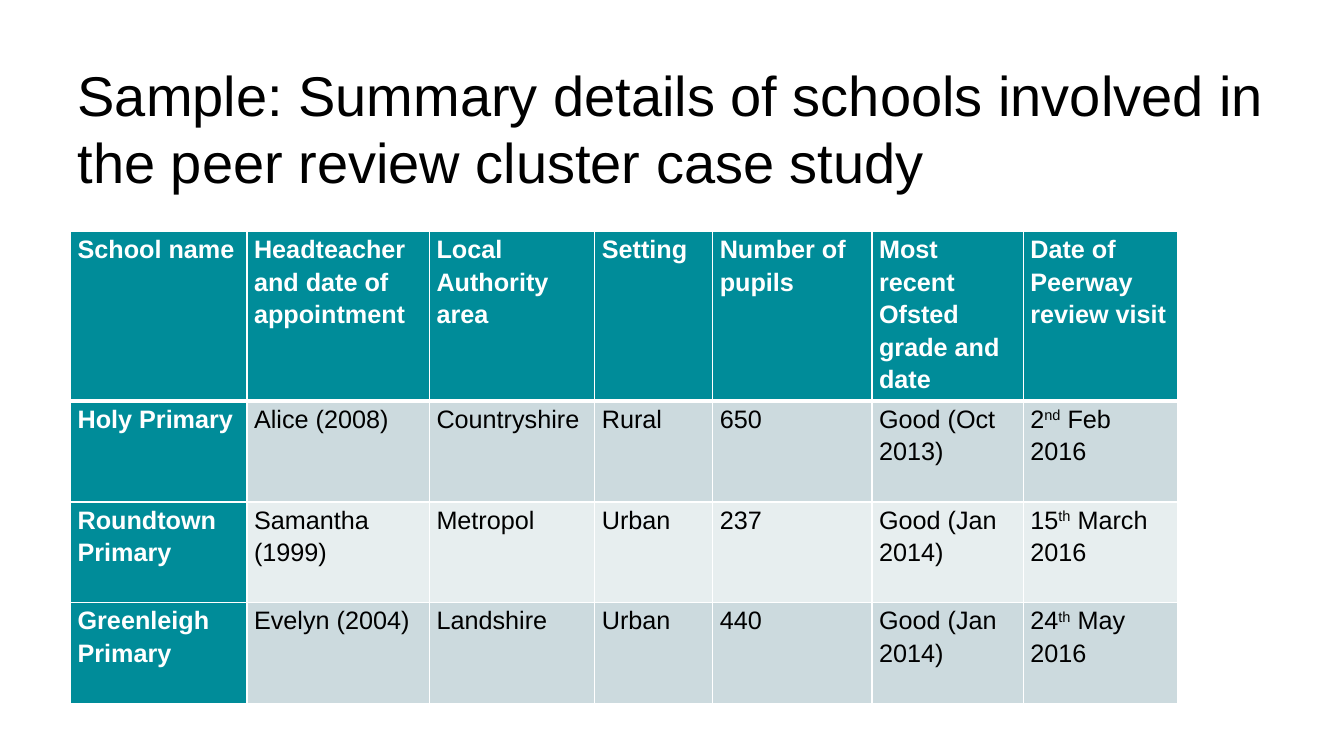
from dataclasses import dataclass

from lxml.etree import SubElement
from pptx import Presentation
from pptx.dml.color import RGBColor
from pptx.enum.text import MSO_ANCHOR, MSO_AUTO_SIZE, PP_ALIGN
from pptx.oxml.ns import qn
from pptx.util import Inches, Pt

TEAL, WHITE, BLACK = "008C99", "FFFFFF", "000000"
BANDS = ("CCDADE", "E7EEEF")
COLUMN_WIDTHS = (1.75, 1.81, 1.64, 1.17, 1.58, 1.5, 1.53)
ROW_HEIGHTS = (1.68, 1, 1, 1)
HEADINGS = (
    "School name",
    "Headteacher and date of appointment",
    "Local Authority area",
    "Setting",
    "Number of pupils",
    "Most recent Ofsted grade and date",
    "Date of Peerway review visit",
)


@dataclass(frozen=True)
class School:
    name: str
    headteacher: str
    authority: str
    setting: str
    pupils: str
    grade: str
    visit: tuple[str, str, str]

    def cells(self) -> tuple:
        return (self.name, self.headteacher, self.authority, self.setting,
                self.pupils, self.grade, self.visit)


SCHOOLS = (
    School("Holy Primary", "Alice (2008)", "Countryshire", "Rural", "650",
           "Good (Oct 2013)", ("2", "nd", " Feb 2016")),
    School("Roundtown Primary", "Samantha (1999)", "Metropol", "Urban", "237",
           "Good (Jan 2014)", ("15", "th", " March 2016")),
    School("Greenleigh Primary", "Evelyn (2004)", "Landshire", "Urban", "440",
           "Good (Jan 2014)", ("24", "th", " May 2016")),
)


def colour(value: str) -> RGBColor:
    return RGBColor.from_string(value)


def apply(target, values: dict) -> None:
    for name, value in values.items():
        setattr(target, name, value)


def format_font(font, size: float, text_colour: str, bold: bool = False) -> None:
    apply(font, {"name": "Arial", "size": Pt(size), "bold": bold})
    font.color.rgb = colour(text_colour)


def add_borders(cell, bottom_width: float) -> None:
    properties = cell._tc.get_or_add_tcPr()
    widths = {"a:lnL": 1, "a:lnR": 1, "a:lnT": 1, "a:lnB": bottom_width}
    for index, (tag, width) in enumerate(widths.items()):
        line = SubElement(properties, qn(tag), w=str(Pt(width)))
        fill = SubElement(line, qn("a:solidFill"))
        SubElement(fill, qn("a:srgbClr"), val=WHITE)
        properties.insert(index, line)


def fill_cell(cell, content: str | tuple, row: int, column: int) -> None:
    is_heading = row == 0 or column == 0
    apply(cell, {"margin_left": Inches(0.07), "margin_right": Inches(0.07),
                 "margin_top": 0, "margin_bottom": 0,
                 "vertical_anchor": MSO_ANCHOR.TOP})
    cell.fill.solid()
    cell.fill.fore_color.rgb = colour(TEAL if is_heading else BANDS[(row - 1) % 2])
    add_borders(cell, 3 if row == 0 else 1)
    paragraph = cell.text_frame.paragraphs[0]
    apply(paragraph, {"line_spacing": 1.15, "space_after": Pt(10)})
    parts = (content,) if isinstance(content, str) else content
    for index, text in enumerate(parts):
        run = paragraph.add_run()
        run.text = text
        format_font(run.font, 18, WHITE if is_heading else BLACK, is_heading)
        if index == 1:
            run.font._element.set("baseline", "30000")


def add_title(slide) -> None:
    title = slide.shapes.title
    apply(title, {"left": Inches(0.67), "top": Inches(0.55),
                  "width": Inches(12), "height": Inches(0.98)})
    frame = title.text_frame
    apply(frame, {"word_wrap": True, "auto_size": MSO_AUTO_SIZE.NONE,
                  "vertical_anchor": MSO_ANCHOR.TOP})
    paragraph = frame.paragraphs[0]
    apply(paragraph, {"alignment": PP_ALIGN.LEFT, "line_spacing": 1.0})
    run = paragraph.add_run()
    run.text = ("Sample: Summary details of schools involved in "
                "the peer review cluster case study")
    format_font(run.font, 40, BLACK)


def add_school_table(slide) -> None:
    rows = (HEADINGS, *(school.cells() for school in SCHOOLS))
    table = slide.shapes.add_table(
        len(rows), len(HEADINGS), Inches(0.7), Inches(2.3),
        Inches(sum(COLUMN_WIDTHS)), Inches(sum(ROW_HEIGHTS))).table
    for column, width in zip(table.columns, COLUMN_WIDTHS):
        column.width = Inches(width)
    for table_row, height in zip(table.rows, ROW_HEIGHTS):
        table_row.height = Inches(height)
    for row, contents in enumerate(rows):
        for column, content in enumerate(contents):
            fill_cell(table.cell(row, column), content, row, column)


def main() -> None:
    presentation = Presentation()
    apply(presentation, {"slide_width": Inches(13.33), "slide_height": Inches(7.5)})
    slide = presentation.slides.add_slide(presentation.slide_layouts[5])
    add_title(slide)
    add_school_table(slide)
    presentation.save("out.pptx")


if __name__ == "__main__":
    main()
